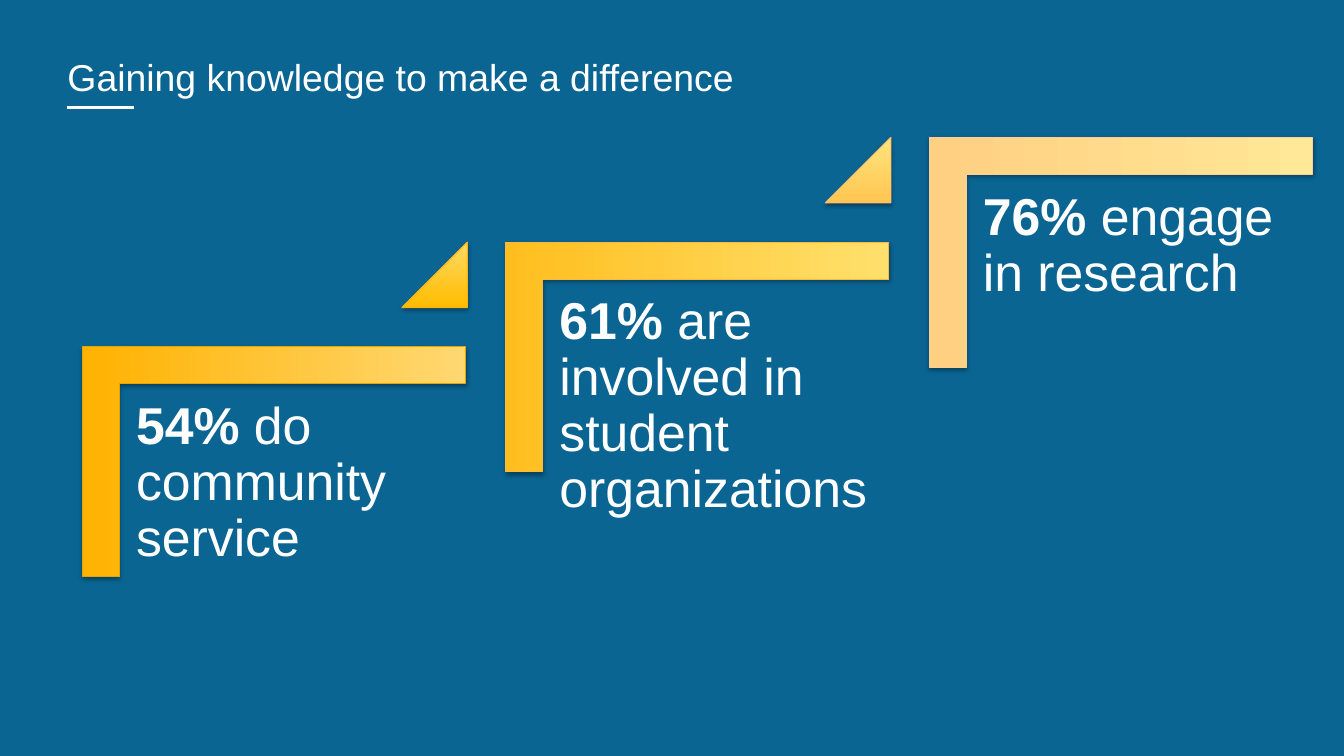
from dataclasses import dataclass
from typing import Optional

from lxml.etree import SubElement
from pptx import Presentation
from pptx.dml.color import RGBColor
from pptx.enum.shapes import MSO_CONNECTOR, MSO_SHAPE
from pptx.enum.text import MSO_ANCHOR, MSO_AUTO_SIZE, PP_ALIGN
from pptx.oxml.ns import qn
from pptx.util import Cm, Pt

COLORS = {"back": "0A6593", "text": "FFFFFF", "shade": "000000"}
FONT = "Arial"
STEP_X, STEP_Y = 10.67, -2.64


@dataclass
class Paint:
    start: str
    end: str
    edge: str


@dataclass
class Step:
    share: str
    label: str
    corner: Paint
    arrow: Optional[Paint] = None


STEPS = [
    Step("54% ", "do community service",
         Paint("FFB200", "FFD872", "E6A400"), Paint("FFBC00", "FFDA63", "FFB011")),
    Step("61% ", "are involved in student organizations",
         Paint("FFBE1E", "FFE06C", "FFB73C"), Paint("FFC551", "FFE57C", "FFC168")),
    Step("76% ", "engage in research", Paint("FFCF82", "FFE897", "FFCE93")),
]


def rgb(code: str) -> RGBColor:
    return RGBColor.from_string(code)


def add_run(par, text: str, size: float, bold: bool = False) -> None:
    run = par.add_run()
    run.text = text
    font = run.font
    font.name, font.size, font.bold = FONT, Pt(size), bold
    font.color.rgb = rgb(COLORS["text"])


def set_inset(frame, inset: float) -> None:
    frame.margin_left = frame.margin_right = Cm(inset)
    frame.margin_top = frame.margin_bottom = Cm(inset)


def add_shade(shape) -> None:
    shape.shadow.inherit = False
    effects = shape._element.spPr.find(qn("a:effectLst"))
    outer = SubElement(effects, qn("a:outerShdw"), blurRad=str(Pt(3.1)),
                       dist=str(Pt(1.8)), dir="5400000", rotWithShape="0")
    color = SubElement(outer, qn("a:srgbClr"), val=COLORS["shade"])
    SubElement(color, qn("a:alpha"), val="35000")


def add_form(slide, kind, box: tuple, paint: Paint, adjust: list):
    shape = slide.shapes.add_shape(kind, *map(Cm, box))
    for index, value in enumerate(adjust):
        shape.adjustments[index] = value
    # Gradient runs from the bottom edge to the top edge
    shape.fill.gradient()
    shape.fill.gradient_angle = 90
    for stop, code in zip(shape.fill.gradient_stops, (paint.start, paint.end)):
        stop.color.rgb = rgb(code)
    shape.line.color.rgb = rgb(paint.edge)
    shape.line.width = Pt(0.75)
    add_shade(shape)
    return shape


def add_step(slide, step: Step, index: int) -> None:
    dx, dy = index * STEP_X, index * STEP_Y
    # Corner bracket
    corner = add_form(slide, MSO_SHAPE.CORNER, (4.01 + dx, 6.81 + dy, 5.79, 9.65),
                      step.corner, [0.161, 0.161])
    corner.rotation = 90
    # Label
    box = slide.shapes.add_textbox(Cm(3.05 + dx), Cm(9.7 + dy), Cm(8.71), Cm(7.65))
    frame = box.text_frame
    frame.word_wrap = True
    set_inset(frame, 0.38)
    par = frame.paragraphs[0]
    par.line_spacing = 0.9
    add_run(par, step.share, 37, True)
    add_run(par, step.label, 37)
    # Triangle leading up to the next step
    if step.arrow:
        add_form(slide, MSO_SHAPE.ISOSCELES_TRIANGLE,
                 (10.13 + dx, 6.1 + dy, 1.65, 1.65), step.arrow, [1])


def add_title(slide, text: str) -> None:
    title = slide.shapes.title
    title.left, title.top = Cm(1.7), Cm(1.35)
    title.width, title.height = Cm(30.48), Cm(1.14)
    frame = title.text_frame
    frame.auto_size = MSO_AUTO_SIZE.NONE
    frame.vertical_anchor = MSO_ANCHOR.MIDDLE
    set_inset(frame, 0)
    par = frame.paragraphs[0]
    par.alignment = PP_ALIGN.LEFT
    add_run(par, text, 26.7)
    # Short rule below the title
    rule = slide.shapes.add_connector(MSO_CONNECTOR.STRAIGHT,
                                      Cm(1.68), Cm(2.71), Cm(3.38), Cm(2.71))
    rule.line.color.rgb = rgb(COLORS["text"])
    rule.line.width = Pt(2)
    SubElement(rule._element.spPr, qn("a:effectLst"))


def main() -> None:
    deck = Presentation()
    deck.slide_width, deck.slide_height = Cm(33.87), Cm(19.05)
    slide = deck.slides.add_slide(deck.slide_layouts.get_by_name("Title Only"))
    slide.background.fill.solid()
    slide.background.fill.fore_color.rgb = rgb(COLORS["back"])
    add_title(slide, "Gaining knowledge to make a difference")
    for index, step in enumerate(STEPS):
        add_step(slide, step, index)
    deck.save("out.pptx")


if __name__ == "__main__":
    main()
